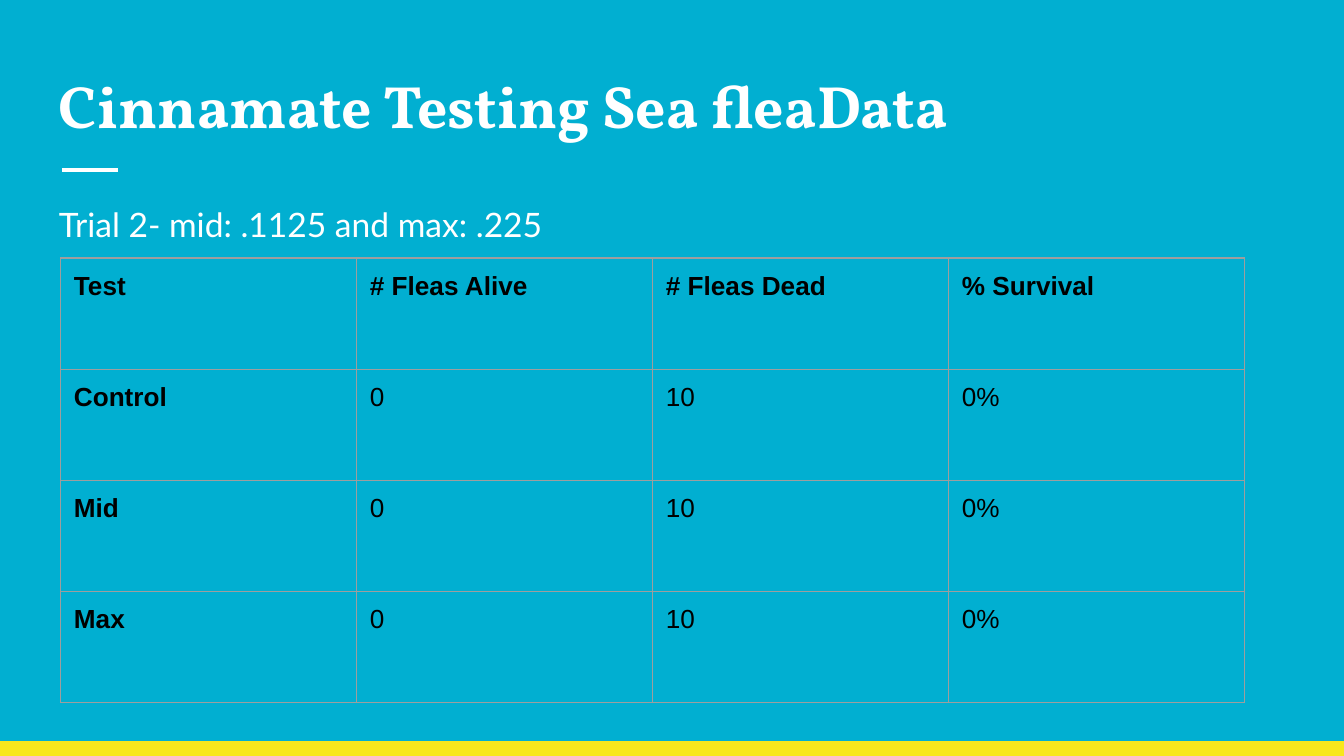
"""Build a slide with the flea survival table of trial 2."""
from lxml.etree import SubElement
from pptx import Presentation
from pptx.dml.color import RGBColor
from pptx.enum.shapes import MSO_CONNECTOR, MSO_SHAPE
from pptx.enum.text import MSO_ANCHOR
from pptx.oxml import parse_xml
from pptx.oxml.ns import nsdecls, qn
from pptx.util import Inches, Pt

TITLE = "Cinnamate Testing Sea fleaData"
NOTE = "Trial 2- mid: .1125 and max: .225"
ROWS = [
    ("Test", "# Fleas Alive", "# Fleas Dead", "% Survival"),
    ("Control", "0", "10", "0%"),
    ("Mid", "0", "10", "0%"),
    ("Max", "0", "10", "0%"),
]
THEME = {
    "back": "01AFD1", "band": "F8E71C", "light": "FFFFFF",
    "dark": "000000", "grid": "9E9E9E",
    "title": ("Vollkorn", 32), "note": ("Lato", 18), "cell": ("Arial", 14),
    "rule": 2.25, "edge": 0.75,
}
WIDE = 10
HIGH = WIDE * 9 / 16
LEFT, TOP, SPAN, DEPTH = 0.45, 1.92, 8.81, 3.31
SIDE, PAD, BAND = 0.34, 0.1, 0.11


def color(name):
    return RGBColor.from_string(THEME[name])


def inset(item):
    item.margin_left = item.margin_right = Inches(PAD)
    item.margin_top = item.margin_bottom = Inches(PAD)


def write(frame, text, style, ink, bold=False):
    para = frame.paragraphs[0]
    run = para.add_run()
    run.text = text
    face, size = THEME[style]
    run.font.name, run.font.size, run.font.bold = face, Pt(size), bold
    run.font.color.rgb = color(ink)
    return para


def add_text(slide, top, high, *words):
    box = slide.shapes.add_textbox(
        Inches(SIDE), Inches(top), Inches(WIDE - 2 * SIDE), Inches(high))
    frame = box.text_frame
    frame.word_wrap = True
    frame.vertical_anchor = MSO_ANCHOR.TOP
    inset(frame)
    return write(frame, *words)


def add_edges(cell):
    props = cell._tc.get_or_add_tcPr()
    for spot, side in enumerate(("lnL", "lnR", "lnT", "lnB")):
        props.insert(spot, parse_xml(
            f'<a:{side} {nsdecls("a")} w="{Pt(THEME["edge"])}"><a:solidFill>'
            f'<a:srgbClr val="{THEME["grid"]}"/></a:solidFill></a:{side}>'))


def add_grid(slide):
    table = slide.shapes.add_table(
        len(ROWS), len(ROWS[0]), Inches(LEFT), Inches(TOP),
        Inches(SPAN), Inches(DEPTH)).table
    table.first_row = table.horz_banding = False
    for r, line in enumerate(ROWS):
        for c, text in enumerate(line):
            cell = table.cell(r, c)
            inset(cell)
            cell.fill.background()
            add_edges(cell)
            write(cell.text_frame, text, "cell", "dark", r == 0 or c == 0)


def add_trim(slide):
    band = slide.shapes.add_shape(
        MSO_SHAPE.RECTANGLE, 0, Inches(HIGH - BAND), Inches(WIDE), Inches(BAND))
    band.shadow.inherit = False
    band.fill.solid()
    band.fill.fore_color.rgb = color("band")
    band.line.fill.background()
    level = Inches(HIGH * 0.225)
    rule = slide.shapes.add_connector(
        MSO_CONNECTOR.STRAIGHT, Inches(0.46), level, Inches(0.88), level)
    rule.line.color.rgb = color("light")
    rule.line.width = Pt(THEME["rule"])
    SubElement(rule._element.spPr, qn("a:effectLst"))


def main():
    deck = Presentation()
    deck.slide_width, deck.slide_height = Inches(WIDE), Inches(HIGH)
    slide = deck.slides.add_slide(deck.slide_layouts[6])
    slide.background.fill.solid()
    slide.background.fill.fore_color.rgb = color("back")
    add_trim(slide)
    add_text(slide, 0.41, 0.71, TITLE, "title", "light", True)
    note = add_text(slide, 1.37, 3.63, NOTE, "note", "light")
    note.line_spacing, note.space_after = 1.15, Pt(16)
    add_grid(slide)
    deck.save("out.pptx")


if __name__ == "__main__":
    main()
